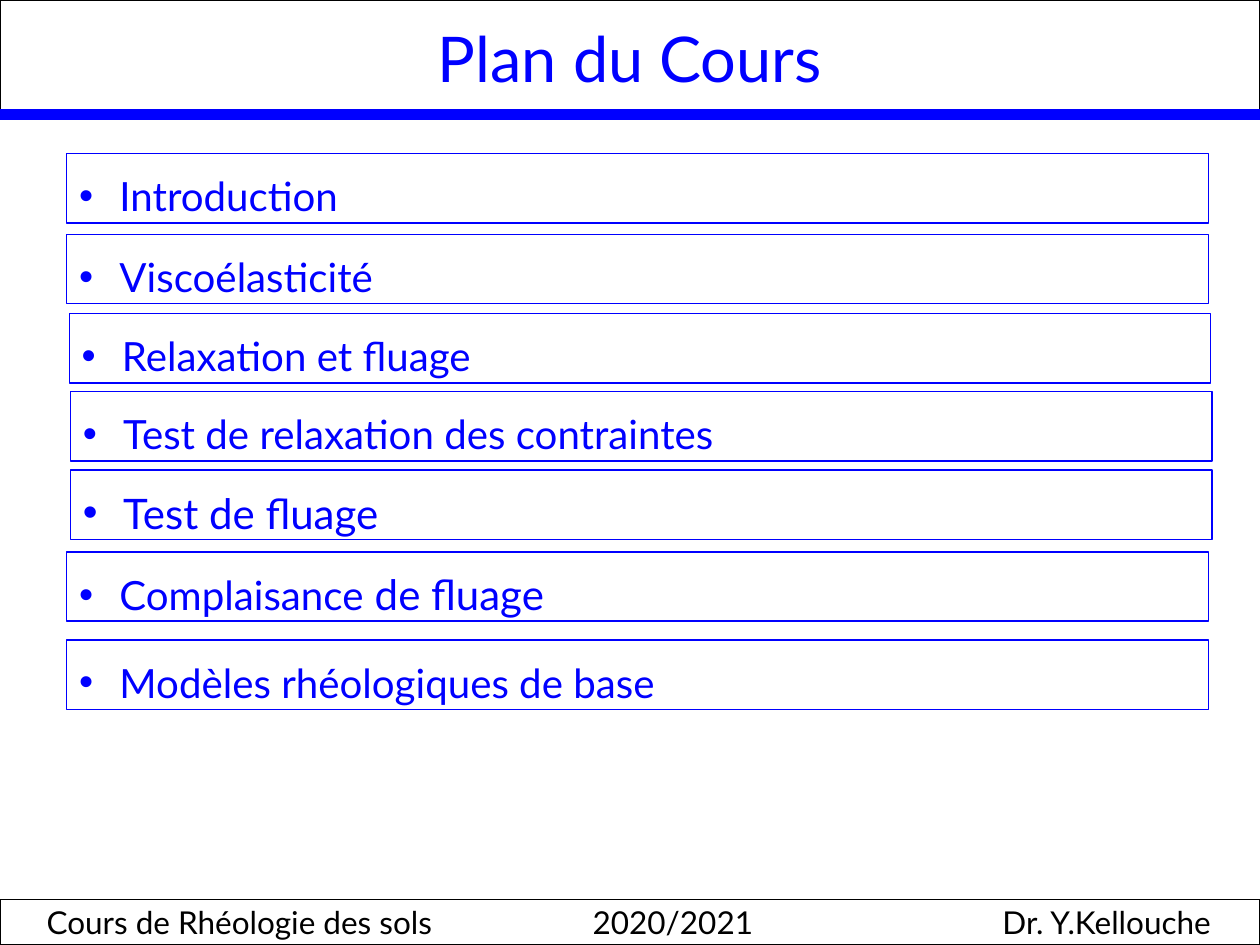
from lxml import etree
from pptx import Presentation
from pptx.dml.color import RGBColor
from pptx.enum.shapes import MSO_CONNECTOR, MSO_SHAPE
from pptx.enum.text import MSO_ANCHOR, PP_ALIGN
from pptx.oxml.ns import qn
from pptx.util import Inches, Pt

RECTANGLE = MSO_SHAPE.RECTANGLE
STRAIGHT = MSO_CONNECTOR.STRAIGHT
MIDDLE = MSO_ANCHOR.MIDDLE
LEFT, CENTER = PP_ALIGN.LEFT, PP_ALIGN.CENTER

FONT = "Lato"
BLUE, BLACK, WHITE = "0000FF", "000000", "FFFFFF"
WIDTH, HEIGHT = 10, 7.5
HEADER_HEIGHT, FOOTER_HEIGHT = 0.91, 0.36
ITEM_WIDTH, ITEM_HEIGHT = 9.06, 0.55
BULLET_INDENT = 0.32
FOOTER_MARGIN = 0.37

TITLE = "Plan du Cours"
ITEMS = [
    (0.53, 1.22, [("Introduction", 23)]),
    (0.53, 1.86, [("Viscoélasticité", 23)]),
    (0.55, 2.49, [("Relaxation et fluage", 23)]),
    (0.56, 3.11, [("Test de relaxation des contraintes", 23)]),
    (0.56, 3.73, [("Test de fluage", 24)]),
    (0.53, 4.38, [("Complaisance", 23), (" de fluage", 24)]),
    (0.53, 5.08, [("Modèles rhéologiques de base", 23)]),
]
FOOTER = ["Cours de Rhéologie des sols", "2020/2021", "Dr. Y.Kellouche"]
FOOTER_TABS = [("ctr", 5.34), ("r", 9.61)]


def color(value):
    return RGBColor.from_string(value)


def add_box(slide, left, top, width, height, line_color, line_width):
    shape = slide.shapes.add_shape(
        RECTANGLE, Inches(left), Inches(top), Inches(width), Inches(height))
    shape.shadow.inherit = False
    shape.fill.solid()
    shape.fill.fore_color.rgb = color(WHITE)
    shape.line.color.rgb = color(line_color)
    shape.line.width = Pt(line_width)
    shape.text_frame.word_wrap = True
    shape.text_frame.vertical_anchor = MIDDLE
    return shape


def set_font(paragraph, size, font_color):
    paragraph.font.name = FONT
    paragraph.font.size = Pt(size)
    paragraph.font.color.rgb = color(font_color)


def add_header(slide):
    header = add_box(slide, 0, 0, WIDTH, HEADER_HEIGHT, BLACK, 1.5)
    paragraph = header.text_frame.paragraphs[0]
    paragraph.text = TITLE
    paragraph.alignment = CENTER
    set_font(paragraph, 36, BLUE)

    rule = slide.shapes.add_connector(
        STRAIGHT, 0, Inches(HEADER_HEIGHT), Inches(WIDTH), Inches(HEADER_HEIGHT))
    rule.line.color.rgb = color(BLUE)
    rule.line.width = Pt(6)
    etree.SubElement(rule._element.spPr, qn("a:effectLst"))


def add_item(slide, left, top, runs):
    box = add_box(slide, left, top, ITEM_WIDTH, ITEM_HEIGHT, BLUE, 0.75)
    paragraph = box.text_frame.paragraphs[0]
    paragraph.alignment = LEFT
    paragraph.line_spacing = 1.3
    properties = paragraph._p.get_or_add_pPr()
    properties.set("marL", str(Inches(BULLET_INDENT)))
    properties.set("indent", str(-Inches(BULLET_INDENT)))
    etree.SubElement(properties, qn("a:buFont"), typeface="Arial")
    etree.SubElement(properties, qn("a:buChar"), char="•")
    set_font(paragraph, runs[0][1], BLUE)
    for text, size in runs:
        run = paragraph.add_run()
        run.text = text
        run.font.size = Pt(size)


def add_footer(slide):
    footer = add_box(
        slide, 0, HEIGHT - FOOTER_HEIGHT, WIDTH, FOOTER_HEIGHT, BLACK, 0.75)
    footer.text_frame.margin_left = Inches(FOOTER_MARGIN)
    paragraph = footer.text_frame.paragraphs[0]
    paragraph.text = "\t".join(FOOTER)
    paragraph.alignment = LEFT
    tabs = etree.SubElement(paragraph._p.get_or_add_pPr(), qn("a:tabLst"))
    for alignment, position in FOOTER_TABS:
        etree.SubElement(tabs, qn("a:tab"), algn=alignment,
                         pos=str(Inches(position - FOOTER_MARGIN)))
    set_font(paragraph, 18, BLACK)


def main():
    presentation = Presentation()
    presentation.slide_width = Inches(WIDTH)
    presentation.slide_height = Inches(HEIGHT)
    slide = presentation.slides.add_slide(presentation.slide_layouts[6])
    add_header(slide)
    for left, top, runs in ITEMS:
        add_item(slide, left, top, runs)
    add_footer(slide)
    presentation.save("out.pptx")


if __name__ == "__main__":
    main()
